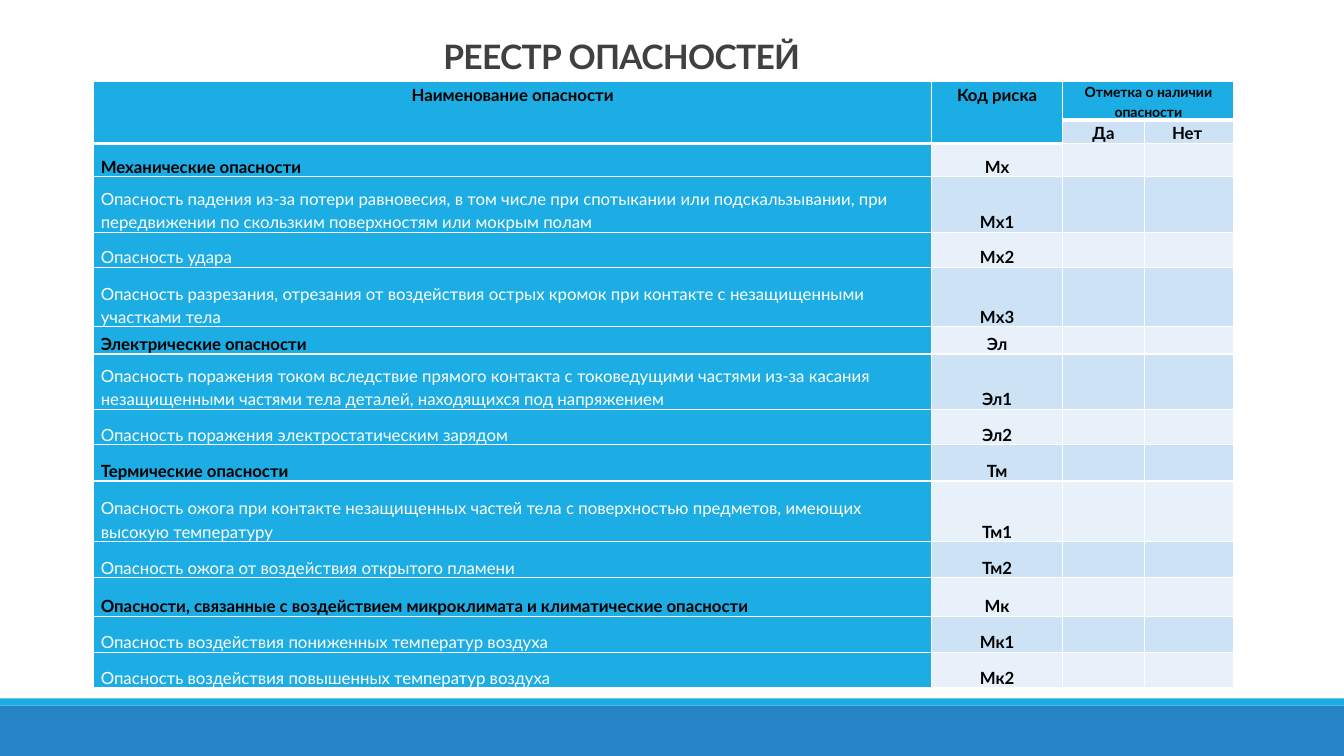
from dataclasses import dataclass

import pptx
import pptx.dml.color
import pptx.enum.shapes
import pptx.enum.text
import pptx.oxml
import pptx.oxml.ns
import pptx.table
import pptx.util
from pptx.dml.color import RGBColor
from pptx.enum.text import MSO_ANCHOR, PP_ALIGN
from pptx.util import Inches, Pt

FONT = "Lato"
WHITE = RGBColor(0xFF, 0xFF, 0xFF)
BLACK = RGBColor(0x00, 0x00, 0x00)
TITLE_GREY = RGBColor(0x40, 0x40, 0x40)
BLUE = RGBColor(0x26, 0x83, 0xC6)
CYAN = RGBColor(0x1C, 0xAD, 0xE4)
BAND_DARK = RGBColor(0xCD, 0xE3, 0xF5)
BAND_LIGHT = RGBColor(0xE8, 0xF1, 0xFA)

COLUMN_WIDTHS = (8.31, 1.3, 0.81, 0.89)
HEADER_HEIGHTS = (0.38, 0.23)


@dataclass(frozen=True)
class Hazard:
    name: str
    code: str
    height: float
    is_group: bool = False


@dataclass(frozen=True)
class Band:
    top: float
    height: float
    color: RGBColor


@dataclass(frozen=True)
class CellStyle:
    fill: RGBColor
    color: RGBColor = BLACK
    bold: bool = True
    size: int = 12
    align: PP_ALIGN = PP_ALIGN.CENTER
    anchor: MSO_ANCHOR = MSO_ANCHOR.BOTTOM
    bottom_line: int = 1


HAZARDS = (
    Hazard("Механические опасности", "Мх", 0.33, True),
    Hazard("Опасность падения из-за потери равновесия, в том числе при спотыкании или "
           "подскальзывании, при передвижении по скользким поверхностям или мокрым полам",
           "Мх1", 0.55),
    Hazard("Опасность удара", "Мх2", 0.35),
    Hazard("Опасность разрезания, отрезания от воздействия острых кромок при контакте "
           "с незащищенными участками тела", "Мх3", 0.59),
    Hazard("Электрические опасности", "Эл", 0.27, True),
    Hazard("Опасность поражения током вследствие прямого контакта с токоведущими частями "
           "из-за касания незащищенными частями тела деталей, находящихся под напряжением",
           "Эл1", 0.55),
    Hazard("Опасность поражения электростатическим зарядом", "Эл2", 0.35),
    Hazard("Термические опасности", "Тм", 0.36, True),
    Hazard("Опасность ожога при контакте незащищенных частей тела с поверхностью "
           "предметов, имеющих высокую температуру", "Тм1", 0.6),
    Hazard("Опасность ожога от воздействия открытого пламени", "Тм2", 0.36),
    Hazard("Опасности, связанные с воздействием микроклимата и климатические опасности",
           "Мк", 0.38, True),
    Hazard("Опасность воздействия пониженных температур воздуха", "Мк1", 0.36),
    Hazard("Опасность воздействия повышенных температур воздуха", "Мк2", 0.35),
)

FOOTER_BANDS = (Band(7, 0.5, BLUE), Band(6.93, 0.07, CYAN))

HEADER = CellStyle(CYAN, anchor=MSO_ANCHOR.TOP, bottom_line=3)
MARK_HEADER = CellStyle(CYAN, size=10, bottom_line=3)
ANSWER_HEADER = CellStyle(BAND_DARK)
GROUP_NAME = CellStyle(CYAN, align=PP_ALIGN.LEFT)
HAZARD_NAME = CellStyle(CYAN, color=WHITE, bold=False, align=PP_ALIGN.LEFT)


def add_footer_band(slide, band: Band, width: int) -> None:
    strip = slide.shapes.add_shape(
        pptx.enum.shapes.MSO_SHAPE.RECTANGLE,
        0, Inches(band.top), width, Inches(band.height))
    strip.shadow.inherit = False
    strip.fill.solid()
    strip.fill.fore_color.rgb = band.color
    strip.line.fill.background()


def format_title(title) -> None:
    title.left, title.top = Inches(0.68), Inches(-0.24)
    title.width, title.height = Inches(10.97), Inches(1.05)
    frame = title.text_frame
    frame.text = "РЕЕСТР ОПАСНОСТЕЙ"
    frame.word_wrap = True
    frame.auto_size = pptx.enum.text.MSO_AUTO_SIZE.NONE
    frame.vertical_anchor = MSO_ANCHOR.BOTTOM
    heading = frame.paragraphs[0]
    heading.alignment = PP_ALIGN.CENTER
    heading.line_spacing = 0.85
    font = heading.runs[0].font
    font.name, font.size, font.bold = FONT, Pt(24), True
    font.color.rgb = TITLE_GREY
    heading.runs[0]._r.get_or_add_rPr().set("spc", "-50")


def set_borders(cell: pptx.table._Cell, bottom_line: int) -> None:
    """Draw white cell borders; they must precede the fill in the cell XML."""
    properties = cell._tc.get_or_add_tcPr()
    widths = (("lnL", 1), ("lnR", 1), ("lnT", 1), ("lnB", bottom_line))
    for position, (side, width) in enumerate(widths):
        properties.insert(position, pptx.oxml.parse_xml(
            f'<a:{side} {pptx.oxml.ns.nsdecls("a")} w="{Pt(width)}">'
            f'<a:solidFill><a:srgbClr val="{WHITE}"/></a:solidFill></a:{side}>'))


def fill_cell(cell: pptx.table._Cell, text: str, style: CellStyle) -> None:
    cell.margin_left = cell.margin_right = Inches(0.07)
    cell.margin_top = cell.margin_bottom = 0
    cell.vertical_anchor = style.anchor
    cell.fill.solid()
    cell.fill.fore_color.rgb = style.fill
    set_borders(cell, style.bottom_line)
    paragraph = cell.text_frame.paragraphs[0]
    paragraph.text = text
    paragraph.alignment = style.align
    paragraph.line_spacing = 1.15
    for run in paragraph.runs:
        run.font.name, run.font.size = FONT, Pt(style.size)
        run.font.bold = style.bold
        run.font.color.rgb = style.color
    if not text:
        # An empty cell needs a small end-of-paragraph size to keep its row low.
        paragraph._p.append(pptx.oxml.parse_xml(
            f'<a:endParaRPr {pptx.oxml.ns.nsdecls("a")} sz="{style.size * 100}"/>'))


def add_hazard_table(slide) -> None:
    heights = HEADER_HEIGHTS + tuple(hazard.height for hazard in HAZARDS)
    register = slide.shapes.add_table(
        len(heights), len(COLUMN_WIDTHS), Inches(0.93), Inches(0.81),
        Inches(sum(COLUMN_WIDTHS)), Inches(sum(heights))).table
    register.first_col = True
    for column, width in zip(register.columns, COLUMN_WIDTHS):
        column.width = Inches(width)
    for row, height in zip(register.rows, heights):
        row.height = Inches(height)

    rows = [
        (("Наименование опасности", HEADER), ("Код риска", HEADER),
         ("Отметка о наличии опасности", MARK_HEADER), ("", MARK_HEADER)),
        (("", HEADER), ("", HEADER), ("Да", ANSWER_HEADER), ("Нет ", ANSWER_HEADER)),
    ]
    for index, hazard in enumerate(HAZARDS):
        band = CellStyle(BAND_DARK if index % 2 else BAND_LIGHT)
        name_style = GROUP_NAME if hazard.is_group else HAZARD_NAME
        rows.append(((hazard.name, name_style), (hazard.code, band), ("", band), ("", band)))
    for row_index, row in enumerate(rows):
        for column_index, (text, style) in enumerate(row):
            fill_cell(register.cell(row_index, column_index), text, style)

    for column_index in (0, 1):
        register.cell(0, column_index).merge(register.cell(1, column_index))
    register.cell(0, 2).merge(register.cell(0, 3))


def main() -> None:
    deck = pptx.Presentation()
    deck.slide_width, deck.slide_height = Inches(13.33), Inches(7.5)
    slide = deck.slides.add_slide(deck.slide_layouts.get_by_name("Title Only"))
    for band in FOOTER_BANDS:
        add_footer_band(slide, band, deck.slide_width)
    add_hazard_table(slide)
    format_title(slide.shapes.title)
    deck.save("out.pptx")


if __name__ == "__main__":
    main()
